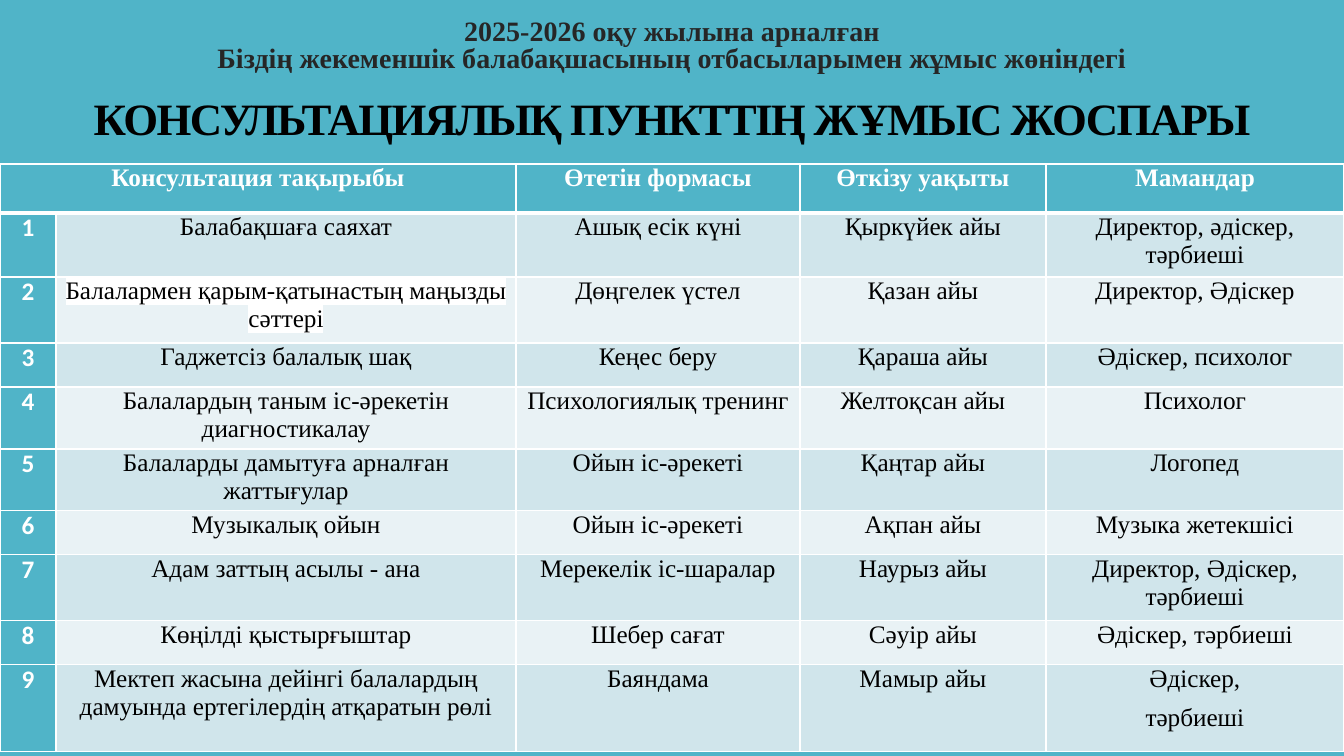
"""Build the yearly work plan slide of a kindergarten consultation point."""
import pptx
import pptx.dml.color
import pptx.enum.text
import pptx.oxml.ns
import pptx.util
from lxml import etree

COLORS = {
    "teal": "50B4C8",
    "odd": "D0E5EB",
    "even": "E9F2F5",
    "white": "FFFFFF",
    "black": "000000",
    "gray": "262626",
}
SERIF, SANS = "Times New Roman", "Calibri"
ANCHOR = pptx.enum.text.MSO_ANCHOR
HEADINGS = ["Консультация тақырыбы", "Өтетін формасы", "Өткізу уақыты", "Мамандар"]
MARKED_TOPIC = "Балалармен қарым-қатынастың маңызды сәттері"
PLAN = [
    ("Балабақшаға саяхат", "Ашық есік күні", "Қыркүйек айы", "Директор, әдіскер, тәрбиеші"),
    (MARKED_TOPIC, "Дөңгелек үстел", "Қазан айы", "Директор, Әдіскер"),
    ("Гаджетсіз балалық шақ", "Кеңес беру", "Қараша айы", "Әдіскер, психолог"),
    ("Балалардың таным іс-әрекетін диагностикалау", "Психологиялық тренинг",
     "Желтоқсан айы", "Психолог"),
    ("Балаларды дамытуға арналған жаттығулар", "Ойын іс-әрекеті", "Қаңтар айы", "Логопед"),
    ("Музыкалық ойын", "Ойын іс-әрекеті", "Ақпан айы", "Музыка жетекшісі"),
    ("Адам заттың асылы - ана", "Мерекелік іс-шаралар", "Наурыз айы",
     "Директор, Әдіскер, тәрбиеші"),
    ("Көңілді қыстырғыштар", "Шебер сағат", "Сәуір айы", "Әдіскер, тәрбиеші"),
    ("Мектеп жасына дейінгі балалардың дамуында ертегілердің атқаратын рөлі",
     "Баяндама", "Мамыр айы", "Әдіскер,\nтәрбиеші"),
]
COLUMN_WIDTHS = [56, 460, 284, 246, 298]
ROW_HEIGHTS = [49, 64, 66, 44, 62, 62, 44, 66, 44, 87]


def px(length):
    return pptx.util.Inches(length / 100.8)


def rgb(name):
    return pptx.dml.color.RGBColor.from_string(COLORS[name])


def add_color(parent, tag, name):
    element = etree.SubElement(parent, pptx.oxml.ns.qn(tag))
    etree.SubElement(element, pptx.oxml.ns.qn("a:srgbClr"), val=COLORS[name])


class PlanSlide:
    """Holds the text style and the current slide."""

    def __init__(self, deck):
        self.slide = deck.slides.add_slide(deck.slide_layouts[5])
        self.slide.background.fill.solid()
        self.slide.background.fill.fore_color.rgb = rgb("teal")

    def style(self, paragraph, size, color, bold=True, face=SERIF):
        paragraph.alignment = pptx.enum.text.PP_ALIGN.CENTER
        font = paragraph.font
        font.size, font.bold, font.name = pptx.util.Pt(size), bold, face
        font.color.rgb = rgb(color)

    def place(self, shape, box, anchor):
        shape.left, shape.top, shape.width, shape.height = map(px, box)
        frame = shape.text_frame
        frame.word_wrap = True
        frame.auto_size = pptx.enum.text.MSO_AUTO_SIZE.NONE
        frame.vertical_anchor = anchor
        return frame.paragraphs[0]

    def title(self, text, box):
        heading = self.place(self.slide.shapes.title, box, ANCHOR.BOTTOM)
        heading.text = text
        heading.line_spacing = 0.85
        self.style(heading, 32, "black")
        heading.runs[0].font.size = pptx.util.Pt(32)
        heading.runs[0]._r.get_or_add_rPr().set("spc", "-120")

    def intro(self, lines, box):
        textbox = self.slide.shapes.add_textbox(*map(px, box))
        intro = self.place(textbox, box, ANCHOR.TOP)
        intro.text = "\v".join(lines)
        intro.line_spacing = 0.8
        self.style(intro, 20, "gray")

    def cell(self, cell, text, fill, color="black", bold=False, face=SERIF):
        cell.margin_left = cell.margin_right = px(5)
        cell.margin_top = cell.margin_bottom = 0
        cell.text = text
        for paragraph in cell.text_frame.paragraphs:
            paragraph.space_after = pptx.util.Pt(8)
            self.style(paragraph, 18, color, bold, face)
        if text == MARKED_TOPIC:
            run = cell.text_frame.paragraphs[0].runs[0]
            add_color(run._r.get_or_add_rPr(), "a:highlight", "white")
        self.borders(cell, 3 if bold and face == SERIF else 1)
        cell.fill.solid()
        cell.fill.fore_color.rgb = rgb(fill)

    def borders(self, cell, bottom):
        properties = cell._tc.get_or_add_tcPr()
        for side, width in zip("LRTB", (1, 1, 1, bottom)):
            line = etree.SubElement(properties, pptx.oxml.ns.qn(f"a:ln{side}"),
                                    w=str(pptx.util.Pt(width)))
            add_color(line, "a:solidFill", "white")

    def plan(self, left, top):
        size = len(ROW_HEIGHTS), len(COLUMN_WIDTHS)
        box = left, top, sum(COLUMN_WIDTHS), sum(ROW_HEIGHTS)
        table = self.slide.shapes.add_table(*size, *map(px, box)).table
        table.first_col = True
        for column, width in zip(table.columns, COLUMN_WIDTHS):
            column.width = px(width)
        for row, height in zip(table.rows, ROW_HEIGHTS):
            row.height = px(height)
        table.cell(0, 0).merge(table.cell(0, 1))
        for column, text in enumerate([HEADINGS[0], "", *HEADINGS[1:]]):
            self.cell(table.cell(0, column), text, "teal", "white", True)
        for number, entries in enumerate(PLAN, 1):
            self.cell(table.cell(number, 0), str(number), "teal", "white", True, SANS)
            for column, text in enumerate(entries, 1):
                self.cell(table.cell(number, column), text, "odd" if number % 2 else "even")


def main():
    deck = pptx.Presentation()
    deck.slide_width, deck.slide_height = px(1344), px(756)
    slide = PlanSlide(deck)
    slide.intro(
        ["2025-2026 оқу жылына арналған",
         "Біздің жекеменшік балабақшасының отбасыларымен жұмыс жөніндегі"],
        (154, 15, 1036, 68))
    slide.plan(0, 164)
    slide.title("КОНСУЛЬТАЦИЯЛЫҚ ПУНКТТІҢ ЖҰМЫС ЖОСПАРЫ", (78, 82, 1188, 68))
    deck.save("out.pptx")


if __name__ == "__main__":
    main()
